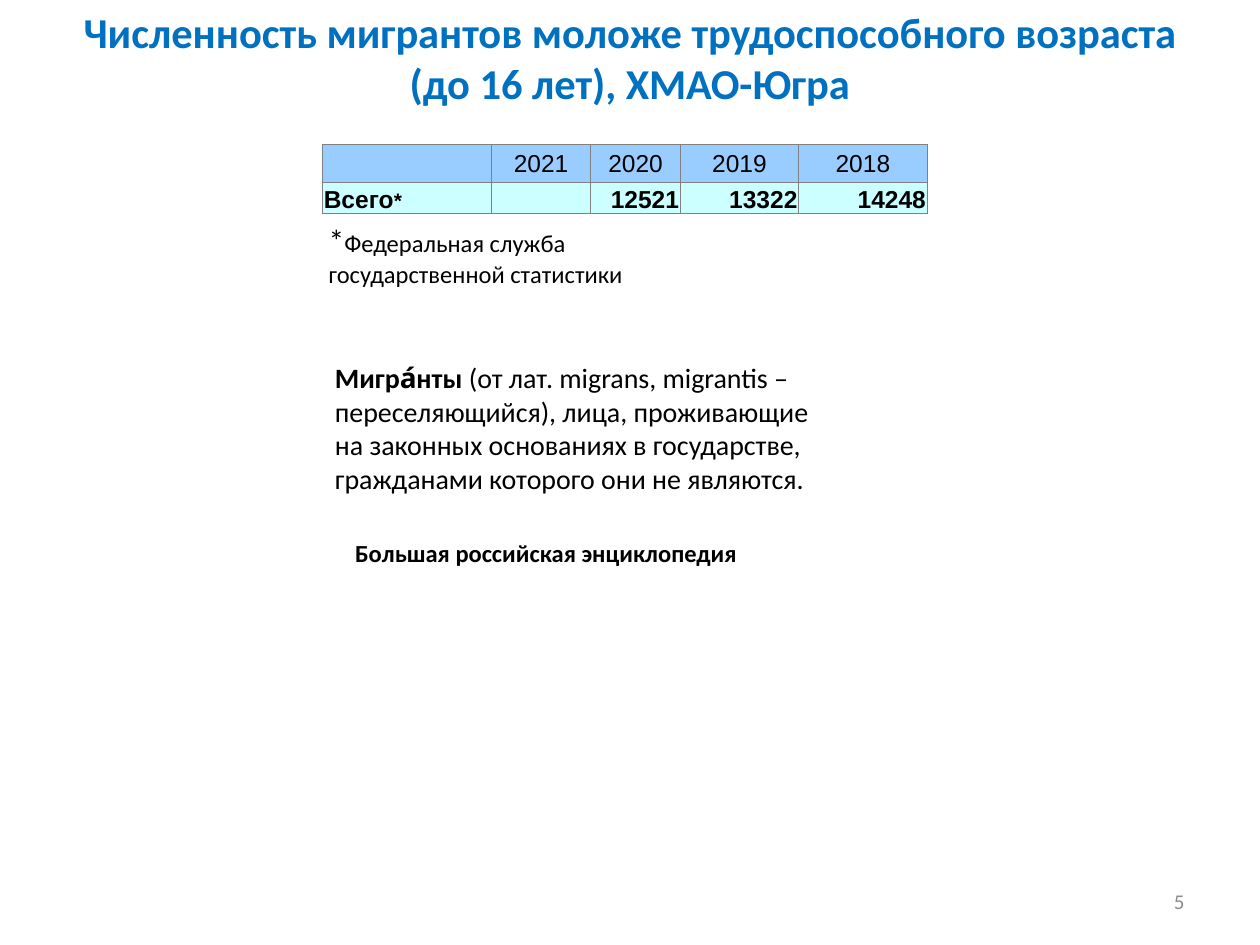
from lxml.etree import SubElement
from pptx import Presentation
from pptx.dml.color import RGBColor
from pptx.enum.text import MSO_ANCHOR, PP_ALIGN
from pptx.oxml.ns import qn
from pptx.util import Inches, Pt

BLACK = RGBColor(0x00, 0x00, 0x00)
TITLE_BLUE = RGBColor(0x00, 0x70, 0xC0)
NUMBER_GRAY = RGBColor(0x8C, 0x8C, 0x8C)
HEADER_FILL = RGBColor(0x99, 0xCC, 0xFF)
TOTAL_FILL = RGBColor(0xCC, 0xFF, 0xFF)
BORDER_GRAY = RGBColor(0x80, 0x80, 0x80)

TITLE = "Численность мигрантов моложе трудоспособного возраста\v(до 16 лет), ХМАО-Югра"
YEARS = ["", "2021", "2020", "2019", "2018"]
TOTALS = [[("Всего", 14), ("*", 12)], "", "12521", "13322", "14248"]
DEFINITION = [
    [("Мигра́нты", 16, True), (" (от лат. migrans, migrantis –", 16, False)],
    "переселяющийся), лица, проживающие",
    "на законных основаниях в государстве,",
    "гражданами которого они не являются.",
]
SOURCE_NOTE = [[("*", 18), ("Федеральная служба", 14)], "государственной статистики"]


class SlideBuilder:
    """Holds the style and the current slide; lengths are shares of the slide's size."""

    text_font = "Calibri"
    table_font = "Arial"

    def __init__(self, presentation):
        self.width = presentation.slide_width
        self.height = presentation.slide_height
        self.slide = presentation.slides.add_slide(presentation.slide_layouts[6])

    def place(self, left, top, width, height):
        return (int(left * self.width), int(top * self.height),
                int(width * self.width), int(height * self.height))

    def fill_paragraph(self, paragraph, content, font_name, size, color=BLACK, bold=False,
                       align=PP_ALIGN.LEFT):
        paragraph.alignment = align
        font = paragraph.font
        font.name, font.size, font.bold = font_name, Pt(size), bold
        font.color.rgb = color
        if isinstance(content, str):
            paragraph.text = content
            return
        for words, run_size, *weight in content:
            run = paragraph.add_run()
            run.text = words
            run.font.size = Pt(run_size)
            if weight:
                run.font.bold = weight[0]

    def text(self, place, lines, size, anchor=MSO_ANCHOR.TOP, **style):
        frame = self.slide.shapes.add_textbox(*self.place(*place)).text_frame
        frame.word_wrap = True
        frame.vertical_anchor = anchor
        for index, line in enumerate(lines):
            paragraph = frame.add_paragraph() if index else frame.paragraphs[0]
            self.fill_paragraph(paragraph, line, self.text_font, size, **style)

    def table(self, place, column_shares, row_shares):
        frame = self.slide.shapes.add_table(
            len(row_shares), len(column_shares), *self.place(*place))
        for column, share in zip(frame.table.columns, column_shares):
            column.width = int(share * self.width)
        for row, share in zip(frame.table.rows, row_shares):
            row.height = int(share * self.height)
        return frame.table

    def row(self, cells, contents, fill, anchor, aligns, bold=False):
        for cell, content, align in zip(cells, contents, aligns):
            cell.margin_left = cell.margin_right = cell.margin_top = Inches(0.01)
            cell.margin_bottom = 0
            cell.vertical_anchor = anchor
            self.borders(cell)
            cell.fill.solid()
            cell.fill.fore_color.rgb = fill
            paragraph = cell.text_frame.paragraphs[0]
            self.fill_paragraph(paragraph, content, self.table_font, 14,
                                bold=bold, align=align)
            if not content:
                SubElement(paragraph._p, qn("a:endParaRPr"), sz="1400")

    def borders(self, cell):
        properties = cell._tc.get_or_add_tcPr()
        for side in ("a:lnL", "a:lnR", "a:lnT", "a:lnB"):
            line = SubElement(properties, qn(side), w=str(Pt(0.5)))
            fill = SubElement(line, qn("a:solidFill"))
            SubElement(fill, qn("a:srgbClr"), val=str(BORDER_GRAY))


def main():
    presentation = Presentation()
    presentation.slide_width, presentation.slide_height = Inches(10), Inches(7.5)
    builder = SlideBuilder(presentation)

    builder.text((0, 0, 1, 0.12), [TITLE], 24.3, MSO_ANCHOR.MIDDLE,
                 color=TITLE_BLUE, bold=True, align=PP_ALIGN.CENTER)
    builder.text((0.717, 0.927, 0.233, 0.053), ["5"], 12, MSO_ANCHOR.MIDDLE,
                 color=NUMBER_GRAY, align=PP_ALIGN.RIGHT)

    migrants = builder.table((0.256, 0.153, 0.48, 0.073),
                             [0.134, 0.079, 0.071, 0.094, 0.102], [0.04, 0.033])
    header, total = migrants.rows
    builder.row(header.cells, YEARS, HEADER_FILL, MSO_ANCHOR.MIDDLE,
                [PP_ALIGN.CENTER] * len(YEARS))
    builder.row(total.cells, TOTALS, TOTAL_FILL, MSO_ANCHOR.BOTTOM,
                [PP_ALIGN.LEFT] + [PP_ALIGN.RIGHT] * (len(TOTALS) - 1), bold=True)

    builder.text((0.256, 0.375, 0.469, 0.157), DEFINITION, 16)
    builder.text((0.272, 0.563, 0.39, 0.045), ["Большая российская энциклопедия"], 14,
                 bold=True)
    builder.text((0.251, 0.227, 0.5, 0.085), SOURCE_NOTE, 14)

    presentation.save("out.pptx")


if __name__ == "__main__":
    main()
